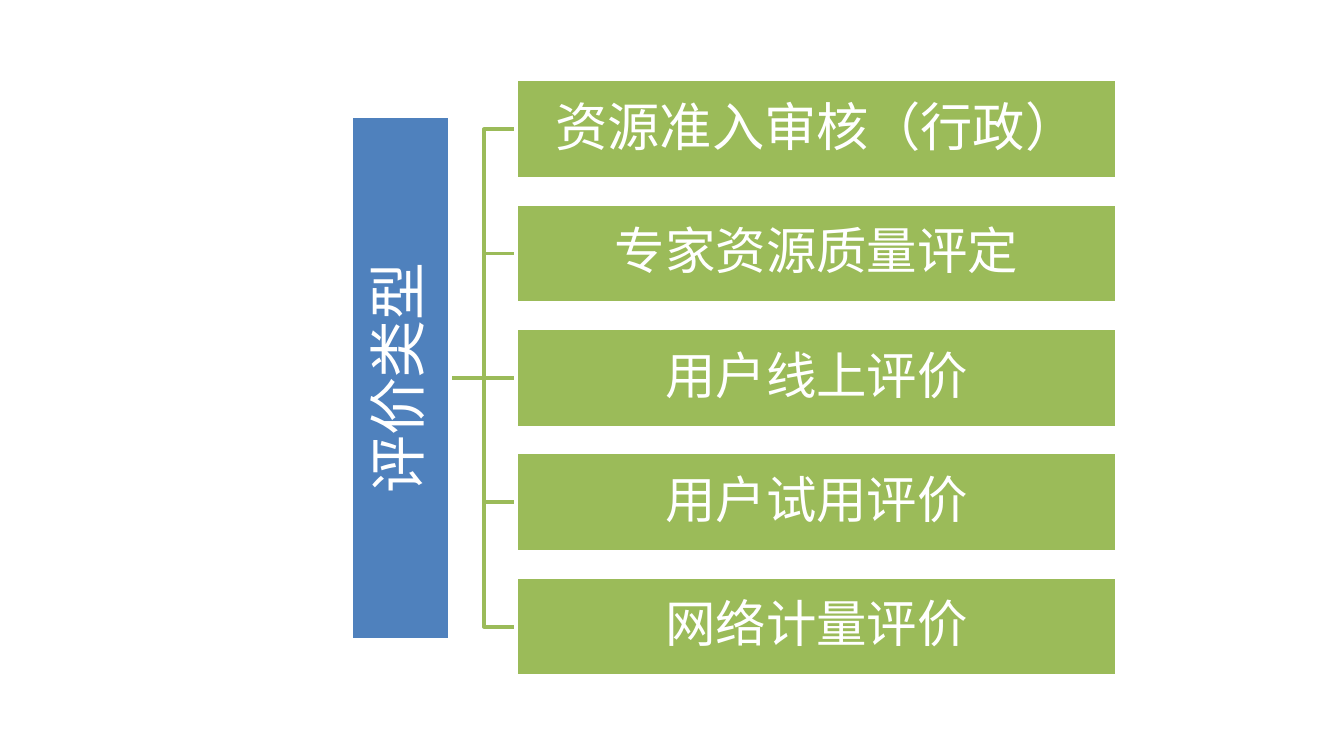
import pptx
import pptx.dml.color
import pptx.enum.shapes
import pptx.enum.text
import pptx.oxml
import pptx.oxml.ns
import pptx.util
from dataclasses import dataclass
from pptx.util import Inches


@dataclass(frozen=True)
class Theme:
    blue: str = "4F81BD"
    green: str = "9BBB59"
    white: str = "FFFFFF"
    font: str = "Noto Sans CJK SC"
    root_size: int = 31
    first_size: int = 28
    branch_size: int = 27
    line_width: int = 2


theme = Theme()


def set_line(shape, color):
    shape.line.color.rgb = pptx.dml.color.RGBColor.from_string(color)
    shape.line.width = pptx.util.Pt(theme.line_width)


def add_box(left, top, width, height, color, text, size):
    box = page.shapes.add_shape(
        pptx.enum.shapes.MSO_SHAPE.RECTANGLE,
        Inches(left), Inches(top), Inches(width), Inches(height))
    box.shadow.inherit = False
    box.fill.solid()
    box.fill.fore_color.rgb = pptx.dml.color.RGBColor.from_string(color)
    set_line(box, theme.white)
    frame = box.text_frame
    frame.word_wrap = True
    frame.vertical_anchor = pptx.enum.text.MSO_ANCHOR.MIDDLE
    frame.margin_left = frame.margin_right = Inches(0.02)
    frame.margin_top = frame.margin_bottom = Inches(0.02)
    frame.text = text
    para = frame.paragraphs[0]
    para.alignment = pptx.enum.text.PP_ALIGN.CENTER
    para.line_spacing = 0.9
    span = para.runs[0]
    span.font.name = theme.font
    span.font.size = pptx.util.Pt(size)
    span.font.color.rgb = pptx.dml.color.RGBColor.from_string(theme.white)
    # Chinese text takes its typeface from the East Asian font
    latin = span.font._element.find(pptx.oxml.ns.qn("a:latin"))
    latin.addnext(latin.makeelement(pptx.oxml.ns.qn("a:ea"), {"typeface": theme.font}))
    return box


# Widescreen page, 16:9
deck = pptx.Presentation()
deck.slide_width = Inches(10)
deck.slide_height = Inches(10 * 9 / 16)
page = deck.slides.add_slide(deck.slide_layouts[6])

# Layout of the tree, centred on the page height
branches = ["资源准入审核（行政）", "专家资源质量评定", "用户线上评价", "用户试用评价", "网络计量评价"]
box_height = 0.74
root_length = 3.9
root_right, trunk, branch_left = 3.35, 3.6, 3.84
middle = deck.slide_height.inches / 2
tree_height = 3.7
step = tree_height / (len(branches) - 1)
centers = [middle + (index - len(branches) // 2) * step
           for index in range(len(branches))]

# Lines from the root to each branch
for center in centers:
    if center == middle:
        link = page.shapes.add_connector(
            pptx.enum.shapes.MSO_CONNECTOR.STRAIGHT,
            Inches(root_right), Inches(middle), Inches(branch_left), Inches(middle))
        link._element.spPr.append(pptx.oxml.parse_xml(
            "<a:effectLst %s/>" % pptx.oxml.ns.nsdecls("a")))
    else:
        outline = page.shapes.build_freeform(Inches(root_right), Inches(middle))
        outline.add_line_segments(
            [(Inches(trunk), Inches(middle)), (Inches(trunk), Inches(center)),
             (Inches(branch_left), Inches(center))], close=False)
        link = outline.convert_to_shape()
        link.shadow.inherit = False
        link.fill.background()
    set_line(link, theme.green)

# Root box, turned to read upwards
root = add_box(root_right - (root_length + box_height) / 2, middle - box_height / 2,
               root_length, box_height, theme.blue, "评价类型", theme.root_size)
root.rotation = 270

# Branch boxes
for index, (text, center) in enumerate(zip(branches, centers)):
    size = theme.first_size if index == 0 else theme.branch_size
    add_box(branch_left, center - box_height / 2, 4.47, box_height,
            theme.green, text, size)

deck.save("out.pptx")
